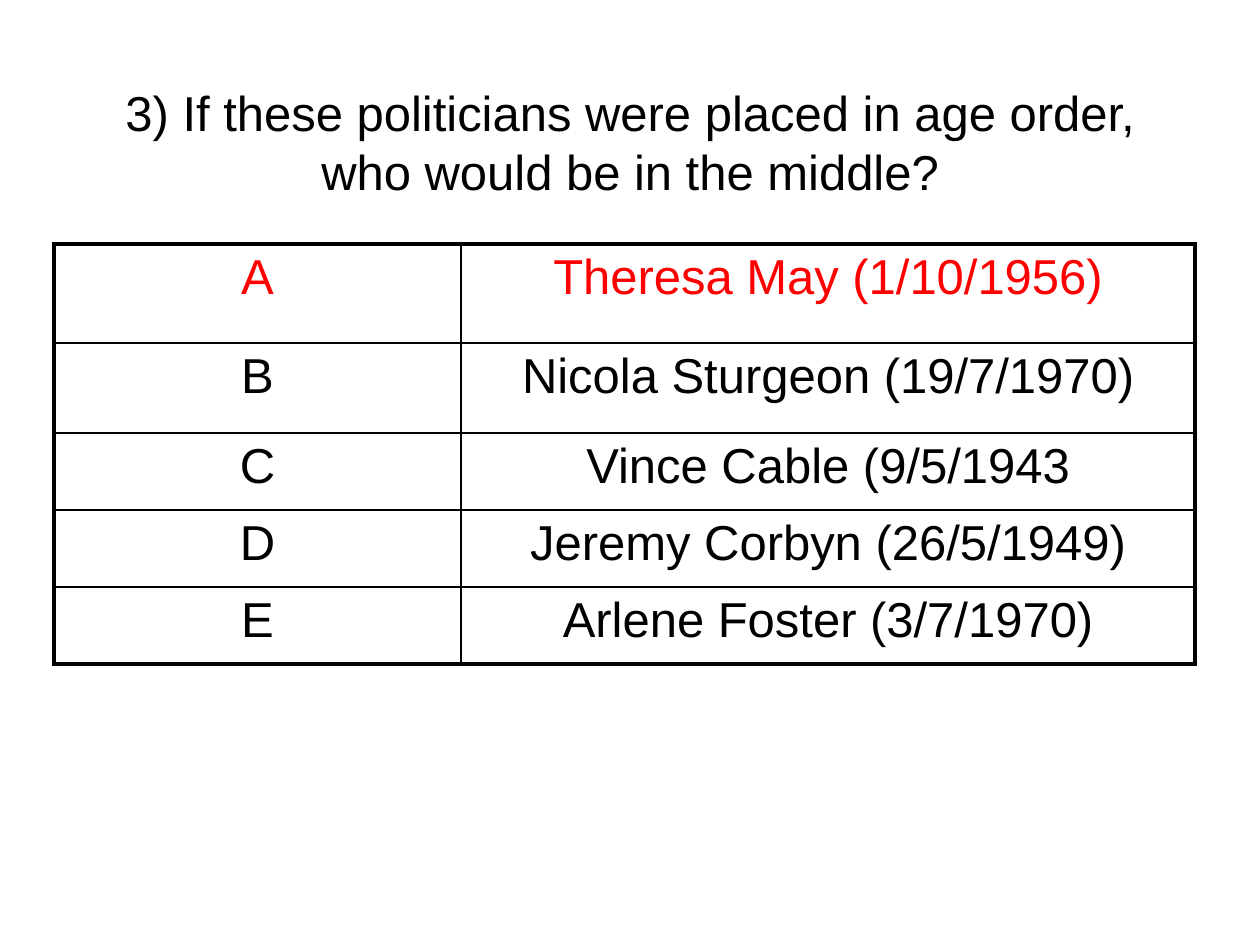
from lxml import etree
from pptx import Presentation
from pptx.dml.color import RGBColor
from pptx.enum.text import MSO_ANCHOR, PP_ALIGN
from pptx.oxml.ns import qn
from pptx.util import Pt

CENTER = PP_ALIGN.CENTER
MIDDLE = MSO_ANCHOR.MIDDLE
BLACK = RGBColor(0, 0, 0)
RED = RGBColor(255, 0, 0)
EMU_PER_PX = 914400 / 126
FONT = "Arial"
FONT_SIZE = 28
THIN, THICK = 1, 2.25
COLUMN_WIDTHS = [407, 734]
ROW_HEIGHTS = [99, 90, 77, 77, 77]
QUESTION = "3) If these politicians were placed in age order, who would be in the middle?"
CORRECT = "A"
ANSWERS = [
    ("A", "Theresa May (1/10/1956)"),
    ("B", "Nicola Sturgeon (19/7/1970)"),
    ("C", "Vince Cable (9/5/1943"),
    ("D", "Jeremy Corbyn (26/5/1949)"),
    ("E", "Arlene Foster (3/7/1970)"),
]


def px(length):
    return round(length * EMU_PER_PX)


def write_text(text_frame, text, color):
    text_frame.text = text
    paragraph = text_frame.paragraphs[0]
    paragraph.alignment = CENTER
    font = paragraph.runs[0].font
    font.name = FONT
    font.size = Pt(FONT_SIZE)
    font.color.rgb = color


def add_title(slide):
    title = slide.shapes.title
    title.left, title.top, title.width, title.height = map(px, (63, 38, 1134, 207))
    write_text(title.text_frame, QUESTION, BLACK)
    title.text_frame.vertical_anchor = MIDDLE


def set_borders(cell, outer_sides):
    properties = cell._tc.get_or_add_tcPr()
    for index, (side, is_outer) in enumerate(outer_sides.items()):
        width = Pt(THICK if is_outer else THIN)
        line = etree.Element(qn(f"a:ln{side}"), w=str(width))
        fill = etree.SubElement(line, qn("a:solidFill"))
        etree.SubElement(fill, qn("a:srgbClr"), val=str(BLACK))
        properties.insert(index, line)


def add_answer_table(slide):
    last_row, last_column = len(ROW_HEIGHTS) - 1, len(COLUMN_WIDTHS) - 1
    frame = slide.shapes.add_table(
        len(ROW_HEIGHTS), len(COLUMN_WIDTHS), px(54), px(244),
        px(sum(COLUMN_WIDTHS)), px(sum(ROW_HEIGHTS)))
    table = frame.table
    table.first_row = table.horz_banding = False
    for column, width in zip(table.columns, COLUMN_WIDTHS):
        column.width = px(width)
    for row_index, answer in enumerate(ANSWERS):
        table.rows[row_index].height = px(ROW_HEIGHTS[row_index])
        color = RED if answer[0] == CORRECT else BLACK
        for column_index, text in enumerate(answer):
            cell = table.cell(row_index, column_index)
            cell.fill.background()
            write_text(cell.text_frame, text, color)
            set_borders(cell, {
                "L": column_index == 0,
                "R": column_index == last_column,
                "T": row_index == 0,
                "B": row_index == last_row,
            })


def main():
    presentation = Presentation()
    presentation.slide_width, presentation.slide_height = px(1260), px(945)
    slide = presentation.slides.add_slide(presentation.slide_layouts[5])
    add_title(slide)
    add_answer_table(slide)
    presentation.save("out.pptx")


if __name__ == "__main__":
    main()
